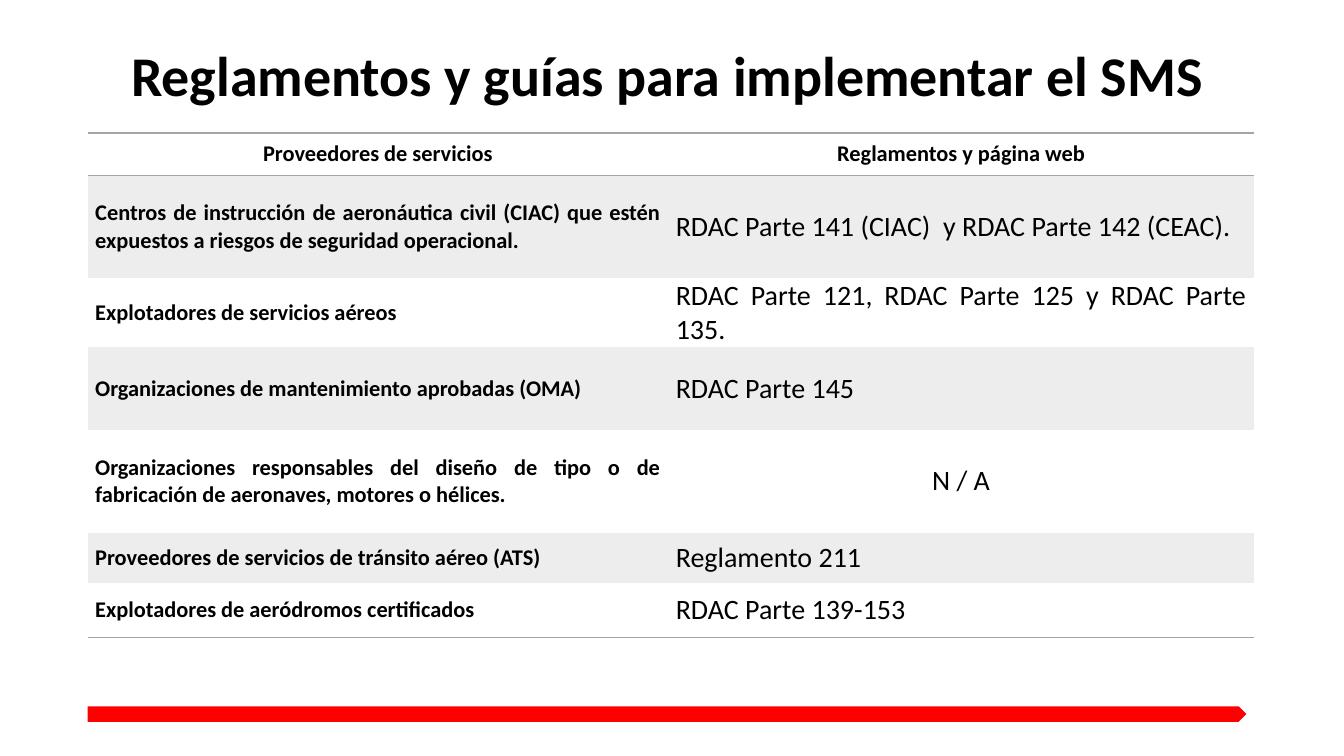
from dataclasses import dataclass

from lxml.etree import SubElement
from pptx import Presentation
from pptx.dml.color import RGBColor as RGB
from pptx.enum.shapes import MSO_SHAPE as Shape
from pptx.enum.text import MSO_ANCHOR as Anchor, PP_ALIGN as Align
from pptx.oxml import parse_xml
from pptx.oxml.ns import nsdecls, qn
from pptx.util import Cm, Pt


@dataclass(frozen=True)
class Theme:
    """Colours, font and type sizes of the slide."""
    font: str = "Calibri"
    ink: str = "000000"
    band: str = "EDEDED"
    rule: str = "A5A5A5"
    bar: str = "FF0000"
    title: int = 40
    body: int = 20
    label: int = 16


THEME = Theme()
NO_STYLE = "{2D5ABB26-0587-4C30-8999-92F81FD0307C}"
COLS = (14.63, 14.76)
HEAD = ("Proveedores de servicios", "Reglamentos y página web")
ROWS = (
    (2.59, "Centros de instrucción de aeronáutica civil (CIAC) que estén "
     "expuestos a riesgos de seguridad operacional.",
     "RDAC Parte 141 (CIAC)  y RDAC Parte 142 (CEAC). ", Align.JUSTIFY),
    (1.74, "Explotadores de servicios aéreos",
     "RDAC Parte 121, RDAC Parte 125 y RDAC Parte 135.", Align.JUSTIFY),
    (2.08, "Organizaciones de mantenimiento aprobadas (OMA)",
     "RDAC Parte 145", Align.LEFT),
    (2.59, "Organizaciones responsables del diseño de tipo o de fabricación "
     "de aeronaves, motores o hélices.", "N / A", Align.CENTER),
    (1.27, "Proveedores de servicios de tránsito aéreo (ATS)",
     "Reglamento 211", Align.LEFT),
    (1.37, "Explotadores de aeródromos certificados",
     "RDAC Parte 139-153 ", Align.JUSTIFY),
)


def style(para, size, bold, align):
    """Format a whole paragraph."""
    para.alignment = align
    font = para.font
    font.name, font.size, font.bold = THEME.font, Pt(size), bold
    font.color.rgb = RGB.from_string(THEME.ink)


def add_rule(cell, *sides):
    """Draw a thin line on the given sides, listed top before bottom."""
    props = cell._tc.get_or_add_tcPr()
    for spot, side in enumerate(sides):
        props.insert(spot, parse_xml(
            f'<a:ln{side} {nsdecls("a")} w="12700"><a:solidFill>'
            f'<a:srgbClr val="{THEME.rule}"/></a:solidFill></a:ln{side}>'))


def fill_cell(cell, text, size, bold, align, band):
    """Write one table cell and shade it when it lies in a band."""
    cell.text = text
    cell.vertical_anchor = Anchor.MIDDLE
    cell.margin_left = cell.margin_right = Cm(0.19)
    cell.margin_top = cell.margin_bottom = 0
    style(cell.text_frame.paragraphs[0], size, bold, align)
    if band:
        cell.fill.solid()
        cell.fill.fore_color.rgb = RGB.from_string(THEME.band)
    else:
        cell.fill.background()


def add_title(slide, left, top, width, height):
    """Place the slide title in its box."""
    title = slide.shapes.title
    title.left, title.top, title.width, title.height = left, top, width, height
    frame = title.text_frame
    frame.text = "Reglamentos y guías para implementar el SMS"
    frame.vertical_anchor = Anchor.MIDDLE
    para = frame.paragraphs[0]
    para.line_spacing = 0.9
    style(para, THEME.title, True, Align.CENTER)


def add_rules(slide, left, top):
    """Build the table of providers and their regulations."""
    heights = [1.07] + [row[0] for row in ROWS]
    table = slide.shapes.add_table(
        len(heights), len(COLS), left, top,
        Cm(sum(COLS)), Cm(sum(heights))).table
    table.first_row = table.horz_banding = False
    props = table._tbl.tblPr
    mark = props.find(qn("a:tableStyleId"))
    if mark is None:
        mark = SubElement(props, qn("a:tableStyleId"))
    mark.text = NO_STYLE
    for col, width in zip(table.columns, COLS):
        col.width = Cm(width)
    for row, height in zip(table.rows, heights):
        row.height = Cm(height)
    for col, text in enumerate(HEAD):
        fill_cell(table.cell(0, col), text, THEME.label, True,
                  Align.CENTER, False)
        add_rule(table.cell(0, col), "T", "B")
        add_rule(table.cell(len(ROWS), col), "B")
    for num, (_, name, text, align) in enumerate(ROWS, 1):
        band = num % 2 == 1
        fill_cell(table.cell(num, 0), name, THEME.label, True,
                  Align.JUSTIFY, band)
        fill_cell(table.cell(num, 1), text, THEME.body, False, align, band)


def add_bar(slide, left, top, width, height):
    """Draw the pointed bar at the foot of the slide."""
    bar = slide.shapes.add_shape(Shape.PENTAGON, left, top, width, height)
    bar.shadow.inherit = False
    bar.fill.solid()
    bar.fill.fore_color.rgb = RGB.from_string(THEME.bar)
    bar.line.fill.background()


def main():
    """Build and save the slide."""
    deck = Presentation()
    deck.slide_width, deck.slide_height = Cm(33.87), Cm(19.05)
    slide = deck.slides.add_slide(deck.slide_layouts.get_by_name("Title Only"))
    left, width = Cm(2.21), Cm(29.2)
    add_bar(slide, left, Cm(17.8), width, Cm(0.39))
    add_title(slide, left, Cm(0.36), width, Cm(3.22))
    add_rules(slide, left, Cm(3.35))
    deck.save("out.pptx")


if __name__ == "__main__":
    main()
